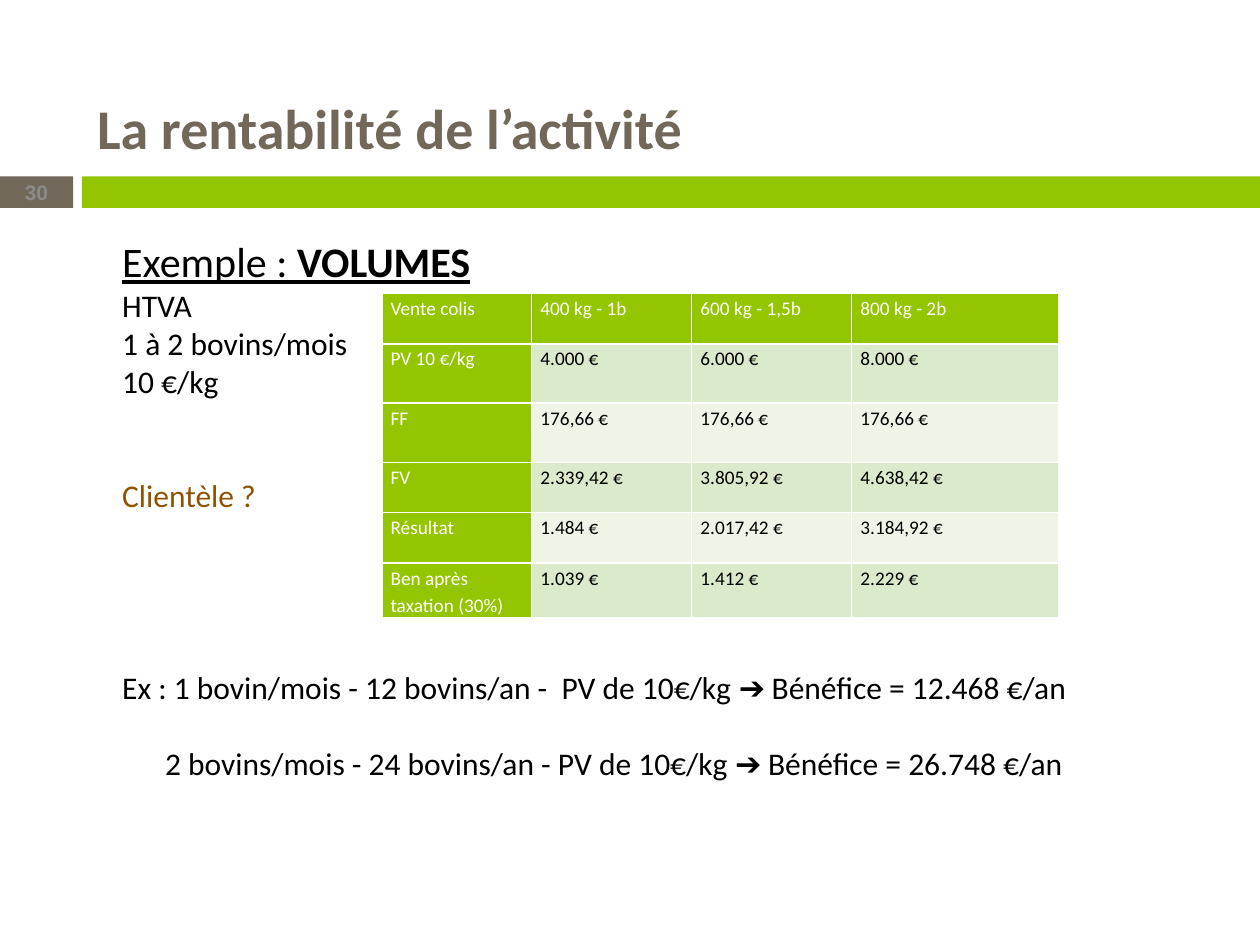
import pptx
import pptx.util
import pptx.dml.color
import pptx.enum.shapes
import pptx.enum.text
import pptx.oxml
import pptx.oxml.ns
from pptx.util import Inches

GREEN, BROWN, WHITE, BLACK = "94C600", "71685A", "FFFFFF", "000000"
ALIGN = pptx.enum.text.PP_ALIGN
ANCHOR = pptx.enum.text.MSO_ANCHOR


def rgb(color):
    return pptx.dml.color.RGBColor.from_string(color)


def assign(target, values):
    for name, value in values.items():
        setattr(target, name, value)


class SlideBuilder:
    font = "Calibri"
    bands = ("DCEACC", "EEF5E7")

    def __init__(self, slide):
        self.slide = slide

    def add_text(self, paragraph, text, size, color, **style):
        run = paragraph.add_run()
        run.text = text
        assign(run.font, {"name": self.font, "size": pptx.util.Pt(size), **style})
        run.font.color.rgb = rgb(color)

    def bar(self, left, width, color):
        bar = self.slide.shapes.add_shape(
            pptx.enum.shapes.MSO_SHAPE.RECTANGLE,
            Inches(left), Inches(1.4), Inches(width), Inches(0.25))
        bar.shadow.inherit = False
        bar.fill.solid()
        bar.fill.fore_color.rgb = rgb(color)
        bar.line.fill.background()
        return bar

    def page_number(self, bar, number):
        frame = bar.text_frame
        assign(frame, {"margin_left": 0, "margin_right": 0, "margin_top": 0,
                       "margin_bottom": 0, "vertical_anchor": ANCHOR.MIDDLE})
        frame.paragraphs[0].alignment = ALIGN.CENTER
        self.add_text(frame.paragraphs[0], number, 12, "8B8B8B", name="Arial", bold=True)

    def place(self, holder, top, height, frame_format):
        assign(holder, {"left": Inches(0.67), "top": Inches(top),
                        "width": Inches(8.92), "height": Inches(height)})
        assign(holder.text_frame, {"word_wrap": True,
                                   "auto_size": pptx.enum.text.MSO_AUTO_SIZE.NONE,
                                   **frame_format})
        return holder.text_frame

    def title(self, text):
        frame = self.place(self.slide.shapes.title, 0.25, 1.08,
                           {"vertical_anchor": ANCHOR.BOTTOM, "margin_top": Inches(0.14)})
        paragraph = frame.paragraphs[0]
        assign(paragraph, {"alignment": ALIGN.LEFT, "line_spacing": 0.9})
        self.add_text(paragraph, text, 32, BROWN, bold=True)

    def body(self, lines):
        frame = self.place(self.slide.placeholders[1], 1.75, 4.92,
                           {"vertical_anchor": ANCHOR.TOP, "margin_top": Inches(0.12)})
        for index, (gap, indent, runs) in enumerate(lines):
            paragraph = frame.add_paragraph() if index else frame.paragraphs[0]
            paragraph.space_before = pptx.util.Pt(gap)
            properties = paragraph._p.get_or_add_pPr()
            properties.set("marL", str(Inches(indent)))
            properties.set("indent", "0")
            properties.append(pptx.oxml.parse_xml(
                f"<a:buNone {pptx.oxml.ns.nsdecls('a')}/>"))
            for text, size, color, style in runs:
                self.add_text(paragraph, text, size, color, **style)

    def cell(self, cell, text, fill, color):
        cell.fill.solid()
        cell.fill.fore_color.rgb = rgb(fill)
        assign(cell, {"margin_left": Inches(0.07), "margin_right": Inches(0.07),
                      "margin_top": 0, "margin_bottom": 0})
        paragraph = cell.text_frame.paragraphs[0]
        paragraph.line_spacing = 1.15
        self.add_text(paragraph, text, 11, color)
        properties = cell._tc.get_or_add_tcPr()
        for index, side in enumerate(("lnL", "lnR", "lnT", "lnB")):
            properties.insert(index, pptx.oxml.parse_xml(
                f'<a:{side} {pptx.oxml.ns.nsdecls("a")} w="12700"><a:solidFill>'
                f'<a:srgbClr val="{WHITE}"/></a:solidFill></a:{side}>'))

    def table(self, left, top, widths, heights, rows):
        table = self.slide.shapes.add_table(
            len(rows), len(widths), Inches(left), Inches(top),
            Inches(sum(widths)), Inches(sum(heights))).table
        for column, width in zip(table.columns, widths):
            column.width = Inches(width)
        for r, (height, values) in enumerate(zip(heights, rows)):
            table.rows[r].height = Inches(height)
            for c, value in enumerate(values):
                heading = r == 0 or c == 0
                self.cell(table.cell(r, c), value,
                          GREEN if heading else self.bands[(r - 1) % 2],
                          WHITE if heading else BLACK)


def main():
    deck = pptx.Presentation()
    assign(deck, {"slide_width": Inches(10), "slide_height": Inches(7.5)})
    builder = SlideBuilder(deck.slides.add_slide(deck.slide_layouts[1]))

    builder.page_number(builder.bar(0, 0.58, BROWN), "30")
    builder.bar(0.65, 9.35, GREEN)
    builder.title("La rentabilité de l’activité")

    example = [("Exemple : ", 24, BLACK, {"underline": True}),
               ("VOLUMES", 24, BLACK, {"underline": True, "bold": True})]
    details = [
        (0, 0.2, "HTVA", BLACK),
        (0, 0.2, "1 à 2 bovins/mois", BLACK),
        (0, 0.2, "10 €/kg", BLACK),
        (44, 0.2, "Clientèle ?", "8F5201"),
        (88, 0.2, "Ex : 1 bovin/mois - 12 bovins/an -  PV de 10€/kg ➔ Bénéfice = 12.468 €/an", BLACK),
        (22, 0.54, "2 bovins/mois - 24 bovins/an - PV de 10€/kg ➔ Bénéfice = 26.748 €/an", BLACK),
    ]
    builder.body([(0, 0.2, example)] + [
        (gap, indent, [(text, 18, color, {})]) for gap, indent, text, color in details])

    builder.table(3.03, 2.33, (1.19, 1.27, 1.27, 1.64),
                  (0.4, 0.47, 0.47, 0.4, 0.4, 0.4), [
        ("Vente colis", "400 kg - 1b", "600 kg - 1,5b", "800 kg - 2b"),
        ("PV 10 €/kg", "4.000 €", "6.000 €", "8.000 €"),
        ("FF", "176,66 €", "176,66 €", "176,66 €"),
        ("FV", "2.339,42 €", "3.805,92 €", "4.638,42 €"),
        ("Résultat", "1.484 €", "2.017,42 €", "3.184,92 €"),
        ("Ben après taxation (30%)", "1.039 €", "1.412 €", "2.229 €"),
    ])
    deck.save("out.pptx")


if __name__ == "__main__":
    main()
